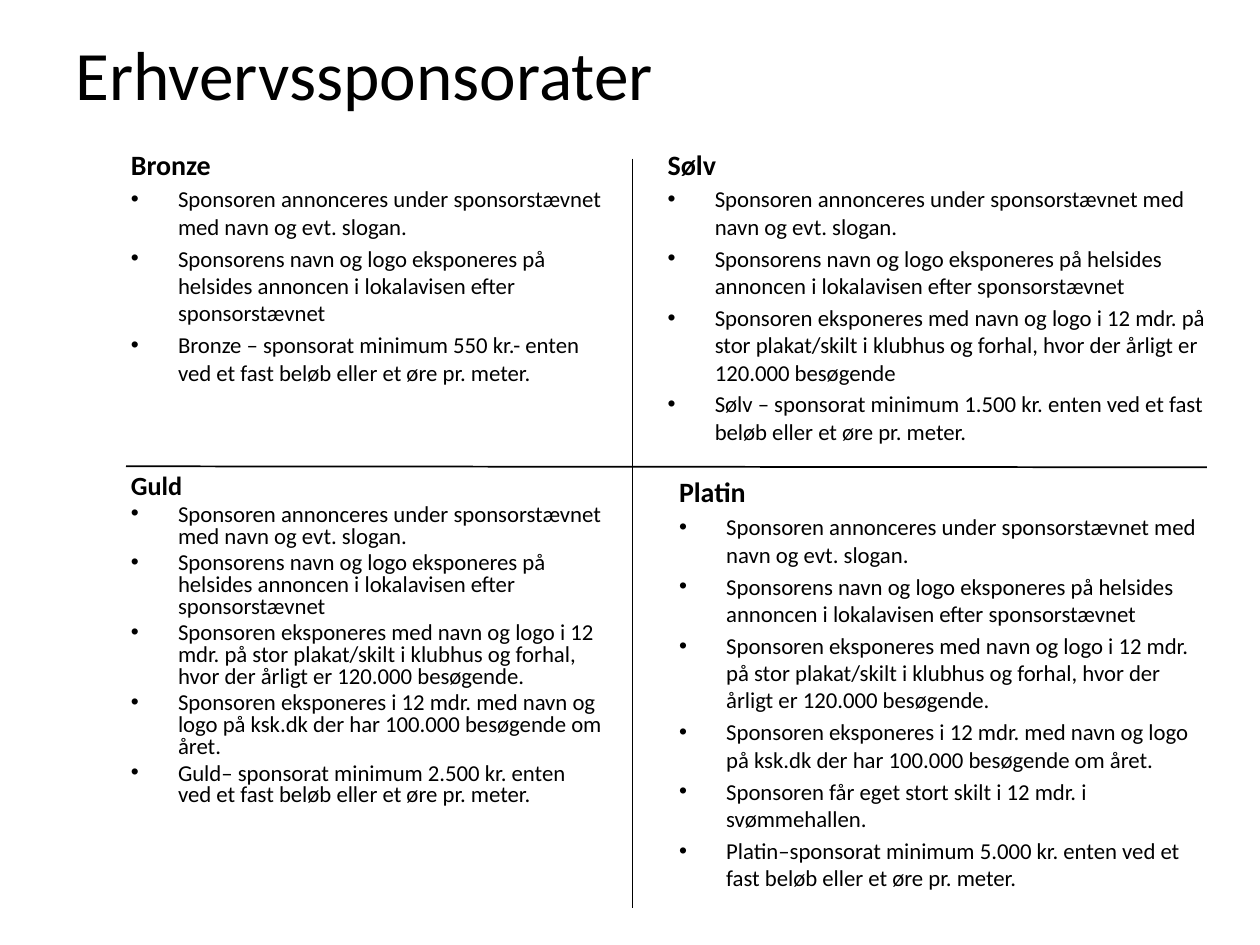
from dataclasses import dataclass

from lxml.etree import SubElement
from pptx import Presentation
from pptx.dml.color import RGBColor
from pptx.enum.shapes import MSO_CONNECTOR
from pptx.enum.text import MSO_ANCHOR
from pptx.oxml.ns import qn
from pptx.slide import Slide
from pptx.text.text import TextFrame, _Paragraph
from pptx.util import Cm, Length, Pt


@dataclass(frozen=True)
class Theme:
    font: str = "Calibri"
    ink: RGBColor = RGBColor(0, 0, 0)
    title_size: float = 39.6
    heading_size: float = 16
    body_size: float = 13
    paragraph_gap: float = 2.6
    rule_width: float = 1
    bullet_indent: Length = Cm(0.95)


@dataclass(frozen=True)
class Box:
    left: float
    top: float
    width: float
    height: float


@dataclass(frozen=True)
class Sponsorship:
    name: str
    box: Box
    benefits: tuple[str, ...]
    heading_size: float = Theme.heading_size
    line_spacing: float = 1.0


THEME = Theme()

TOP_ROW, BOTTOM_ROW = 2.84, 9.45
TOP_HEIGHT, BOTTOM_HEIGHT = 5.87, 8.66
LEFT_COLUMN, LEFT_WIDTH = 2.39, 10.01

ANNOUNCED = "Sponsoren annonceres under sponsorstævnet med navn og evt. slogan."
ADVERTISED = (
    "Sponsorens navn og logo eksponeres på helsides annoncen i lokalavisen "
    "efter sponsorstævnet"
)
POSTER = (
    "Sponsoren eksponeres med navn og logo i 12 mdr. på stor plakat/skilt i "
    "klubhus og forhal, hvor der årligt er 120.000 besøgende"
)
WEBSITE = (
    "Sponsoren eksponeres i 12 mdr. med navn og logo på ksk.dk der har "
    "100.000 besøgende om året."
)
OWN_SIGN = "Sponsoren får eget stort skilt i 12 mdr. i svømmehallen."
PAYMENT = "enten ved et fast beløb eller et øre pr. meter."

SPONSORSHIPS = (
    Sponsorship(
        "Bronze",
        Box(LEFT_COLUMN, TOP_ROW, LEFT_WIDTH, TOP_HEIGHT),
        (ANNOUNCED, ADVERTISED, f"Bronze – sponsorat minimum 550 kr.- {PAYMENT}"),
    ),
    Sponsorship(
        "Sølv",
        Box(13.21, TOP_ROW, 11.68, TOP_HEIGHT),
        (ANNOUNCED, ADVERTISED, POSTER,
         f"Sølv – sponsorat minimum 1.500 kr. {PAYMENT}"),
    ),
    Sponsorship(
        "Guld",
        Box(LEFT_COLUMN, BOTTOM_ROW, LEFT_WIDTH, BOTTOM_HEIGHT),
        (ANNOUNCED, ADVERTISED, f"{POSTER}.", WEBSITE,
         f"Guld– sponsorat minimum 2.500 kr. {PAYMENT}"),
        heading_size=15,
        line_spacing=0.8,
    ),
    Sponsorship(
        "Platin",
        Box(13.44, BOTTOM_ROW, 11.13, BOTTOM_HEIGHT),
        (ANNOUNCED, ADVERTISED, f"{POSTER}.", WEBSITE, OWN_SIGN,
         f"Platin–sponsorat minimum 5.000 kr. {PAYMENT}"),
    ),
)


def add_text_frame(slide: Slide, box: Box) -> TextFrame:
    frame = slide.shapes.add_textbox(
        Cm(box.left), Cm(box.top), Cm(box.width), Cm(box.height)
    ).text_frame
    frame.word_wrap = True
    return frame


def add_run(paragraph: _Paragraph, text: str, size: float, bold: bool = False) -> None:
    run = paragraph.add_run()
    run.text = text
    run.font.name = THEME.font
    run.font.size = Pt(size)
    run.font.bold = bold
    run.font.color.rgb = THEME.ink


def add_bullet(paragraph: _Paragraph) -> None:
    properties = paragraph._p.get_or_add_pPr()
    properties.set("marL", str(int(THEME.bullet_indent)))
    properties.set("indent", str(-int(THEME.bullet_indent)))
    SubElement(properties, qn("a:buFont")).set("typeface", "Arial")
    SubElement(properties, qn("a:buChar")).set("char", "•")


def add_title(slide: Slide, text: str) -> None:
    frame = add_text_frame(slide, Box(1.27, 0.76, 22.86, 1.42))
    frame.vertical_anchor = MSO_ANCHOR.MIDDLE
    add_run(frame.paragraphs[0], text, THEME.title_size)


def add_sponsorship(slide: Slide, sponsorship: Sponsorship) -> None:
    frame = add_text_frame(slide, sponsorship.box)
    heading = frame.paragraphs[0]
    heading.line_spacing = sponsorship.line_spacing
    add_run(heading, sponsorship.name, sponsorship.heading_size, bold=True)
    for benefit in sponsorship.benefits:
        item = frame.add_paragraph()
        add_bullet(item)
        item.line_spacing = sponsorship.line_spacing
        item.space_before = Pt(THEME.paragraph_gap)
        add_run(item, benefit, THEME.body_size)


def add_divider(slide: Slide, x1: float, y1: float, x2: float, y2: float) -> None:
    divider = slide.shapes.add_connector(
        MSO_CONNECTOR.STRAIGHT, Cm(x1), Cm(y1), Cm(x2), Cm(y2)
    )
    divider.line.color.rgb = THEME.ink
    divider.line.width = Pt(THEME.rule_width)
    SubElement(divider._element.spPr, qn("a:effectLst"))


def main() -> None:
    presentation = Presentation()
    presentation.slide_width = Cm(25.4)
    presentation.slide_height = Cm(19.05)
    slide = presentation.slides.add_slide(presentation.slide_layouts[6])

    add_title(slide, "Erhvervssponsorater")
    for sponsorship in SPONSORSHIPS:
        add_sponsorship(slide, sponsorship)
    add_divider(slide, 12.75, 3.2, 12.75, 18.31)
    add_divider(slide, 2.54, 9.4, 24.33, 9.42)

    presentation.save("out.pptx")


if __name__ == "__main__":
    main()
